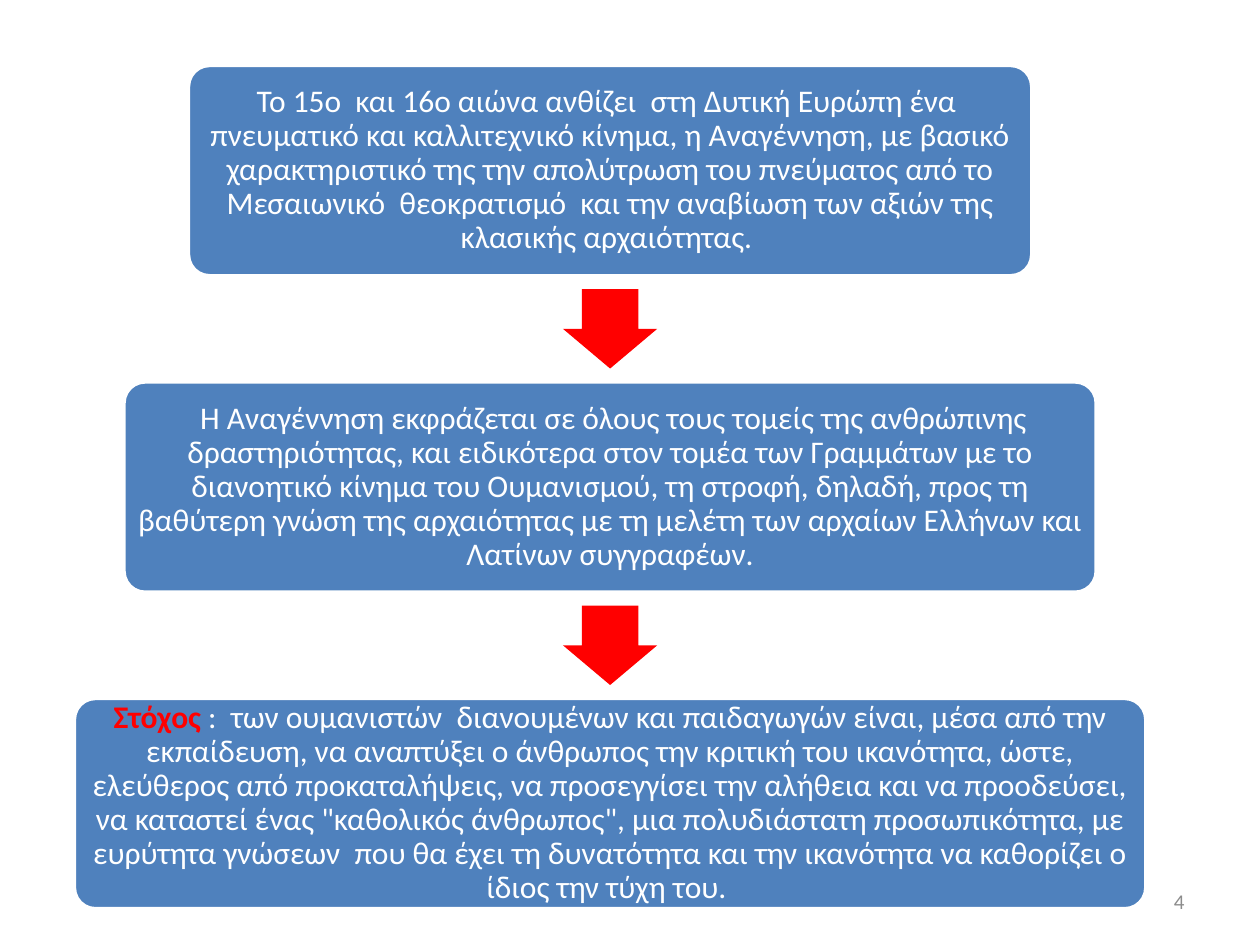
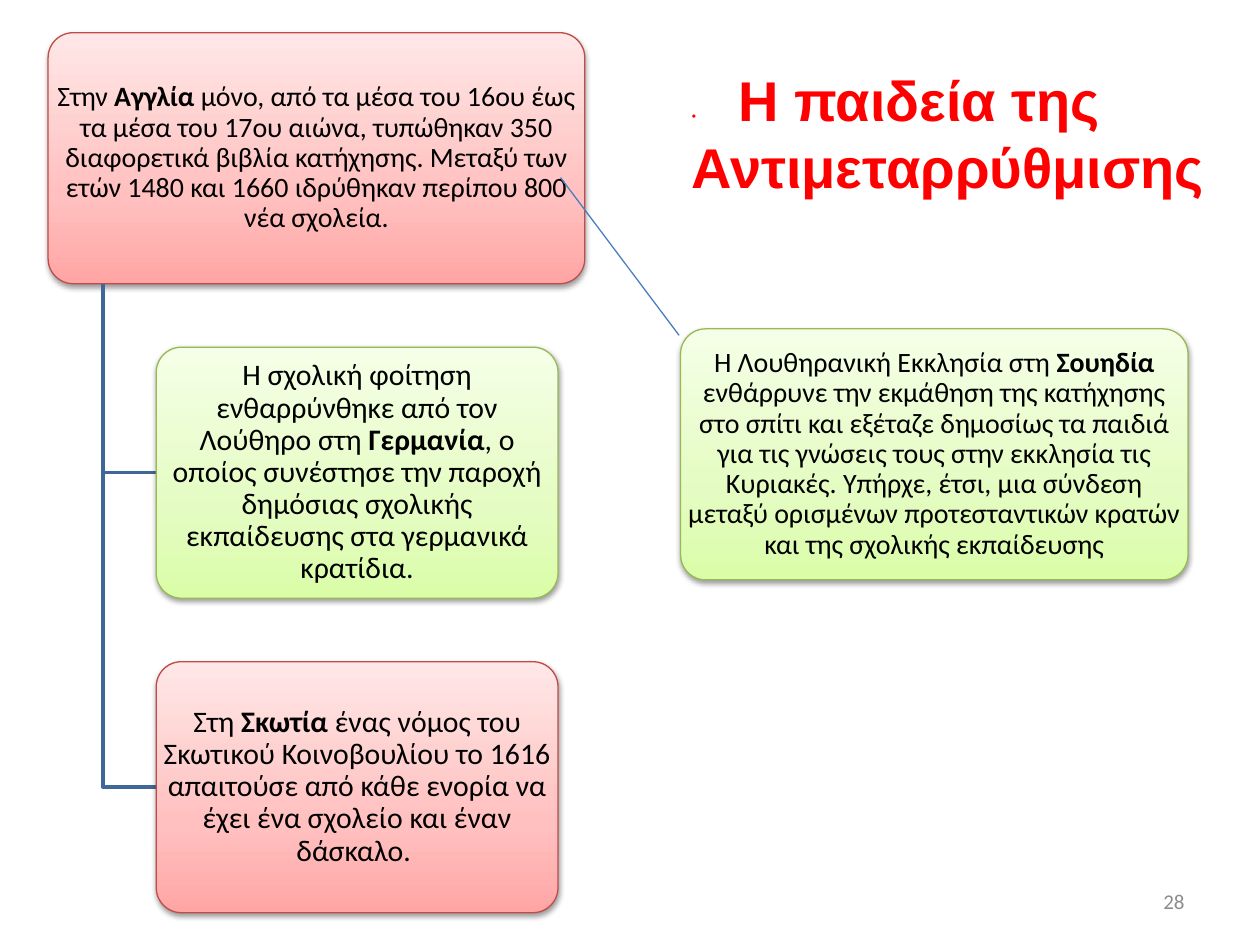
"""Builds two slides on Renaissance humanism and Counter-Reformation schooling."""
from lxml import etree
from pptx import Presentation
from pptx.dml.color import RGBColor
from pptx.enum.shapes import MSO_CONNECTOR, MSO_SHAPE
from pptx.enum.text import MSO_ANCHOR, MSO_AUTO_SIZE, PP_ALIGN
from pptx.oxml import parse_xml
from pptx.oxml.ns import nsdecls, qn
from pptx.util import Cm, Pt

ROUNDED = MSO_SHAPE.ROUNDED_RECTANGLE
DOWN_ARROW = MSO_SHAPE.DOWN_ARROW
STRAIGHT = MSO_CONNECTOR.STRAIGHT
LEFT, CENTER, RIGHT = PP_ALIGN.LEFT, PP_ALIGN.CENTER, PP_ALIGN.RIGHT
TOP, MIDDLE = MSO_ANCHOR.TOP, MSO_ANCHOR.MIDDLE
NO_AUTOFIT = MSO_AUTO_SIZE.NONE

WHITE = RGBColor(0xFF, 0xFF, 0xFF)
BLACK = RGBColor(0x00, 0x00, 0x00)
RED = RGBColor(0xFF, 0x00, 0x00)
BLUE = RGBColor(0x4F, 0x81, 0xBD)
LINK_BLUE = RGBColor(0x4B, 0x7E, 0xBC)
BRANCH_BLUE = RGBColor(0x3F, 0x67, 0x97)
GREY = RGBColor(0x8C, 0x8C, 0x8C)
PINK_LINE = RGBColor(0xBF, 0x4C, 0x48)
GREEN_LINE = RGBColor(0x98, 0xB9, 0x55)
PINK_STOPS = (RGBColor(0xFF, 0xA6, 0xA5), RGBColor(0xFF, 0xC0, 0xBF), RGBColor(0xFF, 0xE7, 0xE7))
GREEN_STOPS = (RGBColor(0xDA, 0xFD, 0xA7), RGBColor(0xE4, 0xFC, 0xC2), RGBColor(0xF5, 0xFF, 0xE7))
PINK = (PINK_STOPS, PINK_LINE)
GREEN = (GREEN_STOPS, GREEN_LINE)

STEP_TOP, STEP_HEIGHT, STEP_PITCH, STEP_CENTER = 1.32, 4.24, 6.38, 12.3
ARROW_WIDTH, ARROW_HEIGHT = 1.9, 1.6
CARD_TOP, CARD_HEIGHT, CARD_PITCH = 0.66, 5.06, 6.34
BRANCH_LEFT, BRANCH_WIDTH, TRUNK_X = 3.15, 8.1, 2.08

STEPS = [
    (17, [("Το 15ο  και 16ο αιώνα ανθίζει  στη Δυτική Ευρώπη ένα  πνευματικό και "
           "καλλιτεχνικό κίνημα, η Αναγέννηση, με βασικό χαρακτηριστικό της την "
           "απολύτρωση του πνεύματος από το Μεσαιωνικό  θεοκρατισμό  και την αναβίωση "
           "των αξιών της κλασικής αρχαιότητας. ", WHITE, False)]),
    (19.6, [(" Η Αναγέννηση εκφράζεται σε όλους τους τομείς της ανθρώπινης "
             "δραστηριότητας, και ειδικότερα στον τομέα των Γραμμάτων με το διανοητικό "
             "κίνημα του Ουμανισμού, τη στροφή, δηλαδή, προς τη βαθύτερη γνώση της "
             "αρχαιότητας με τη μελέτη των αρχαίων Ελλήνων και Λατίνων συγγραφέων.",
             WHITE, False)]),
    (21.6, [("Στόχος", RED, True),
            (" :  των ουμανιστών  διανουμένων και παιδαγωγών είναι, μέσα από την "
             "εκπαίδευση, να αναπτύξει ο άνθρωπος την κριτική του ικανότητα, ώστε, "
             "ελεύθερος από προκαταλήψεις, να προσεγγίσει την αλήθεια και να προοδεύσει, "
             "να καταστεί ένας \"καθολικός άνθρωπος\", μια πολυδιάστατη προσωπικότητα, με "
             "ευρύτητα γνώσεων  που θα έχει τη δυνατότητα και την ικανότητα να καθορίζει "
             "ο ίδιος την τύχη του. ", WHITE, False)]),
]
ENGLAND = [("Στην ", BLACK, False), ("Αγγλία ", BLACK, True),
           ("μόνο, από τα μέσα του 16ου έως τα μέσα του 17ου αιώνα, τυπώθηκαν 350 "
            "διαφορετικά βιβλία κατήχησης. Μεταξύ των ετών 1480 και 1660 ιδρύθηκαν "
            "περίπου 800 νέα σχολεία.", BLACK, False)]
GERMANY = [("Η σχολική φοίτηση ενθαρρύνθηκε από τον Λούθηρο στη ", BLACK, False),
           ("Γερμανία", BLACK, True),
           (", ο οποίος συνέστησε την παροχή δημόσιας σχολικής εκπαίδευσης στα "
            "γερμανικά κρατίδια.", BLACK, False)]
SCOTLAND = [("Στη ", BLACK, False), ("Σκωτία", BLACK, True),
            (" ένας νόμος του Σκωτικού Κοινοβουλίου το 1616 απαιτούσε από κάθε ενορία "
             "να έχει ένα σχολείο και έναν δάσκαλο. ", BLACK, False)]
SWEDEN = [("Η Λουθηρανική Εκκλησία στη ", BLACK, False), ("Σουηδία ", BLACK, True),
          ("ενθάρρυνε την εκμάθηση της κατήχησης στο σπίτι και εξέταζε δημοσίως τα "
           "παιδιά για τις γνώσεις τους στην εκκλησία τις Κυριακές. Υπήρχε, έτσι, μια "
           "σύνδεση μεταξύ ορισμένων προτεσταντικών κρατών και της σχολικής "
           "εκπαίδευσης", BLACK, False)]


def add_run(p, text, size, color, bold=False, font="Calibri"):
    """Append one formatted run to a paragraph."""
    r = p.add_run()
    r.text = text
    r.font.name, r.font.size, r.font.bold = font, Pt(size), bold
    r.font.color.rgb = color


def add_rounded_box(s, left, top, width, height, runs, size, inset):
    """Add a rounded rectangle with centred text."""
    sp = s.shapes.add_shape(ROUNDED, Cm(left), Cm(top), Cm(width), Cm(height))
    sp.adjustments[0] = 0.1
    sp.shadow.inherit = False
    tf = sp.text_frame
    tf.word_wrap, tf.vertical_anchor = True, MIDDLE
    tf.margin_left = tf.margin_right = tf.margin_top = tf.margin_bottom = Cm(inset)
    p = tf.paragraphs[0]
    p.alignment, p.line_spacing = CENTER, 0.9
    for text, color, bold in runs:
        add_run(p, text, size, color, bold)
    return sp


def add_step(s, index, width, runs):
    """Add one blue box of the vertical sequence."""
    sp = add_rounded_box(s, STEP_CENTER - width / 2, STEP_TOP + index * STEP_PITCH,
                         width, STEP_HEIGHT, runs, 18, 0.05)
    sp.fill.solid()
    sp.fill.fore_color.rgb = BLUE
    sp.line.color.rgb = WHITE
    sp.line.width = Pt(2)


def add_step_arrow(s, index):
    """Add the red arrow in the gap below a step."""
    gap_center = STEP_TOP + index * STEP_PITCH + (STEP_HEIGHT + STEP_PITCH) / 2
    sp = s.shapes.add_shape(DOWN_ARROW, Cm(STEP_CENTER - ARROW_WIDTH / 2),
                            Cm(gap_center - ARROW_HEIGHT / 2),
                            Cm(ARROW_WIDTH), Cm(ARROW_HEIGHT))
    sp.adjustments[0], sp.adjustments[1] = 0.6, 0.5
    sp.shadow.inherit = False
    sp.fill.solid()
    sp.fill.fore_color.rgb = RED
    sp.line.fill.background()


def add_card(s, left, top, width, runs, size, scheme):
    """Add a gradient card with a soft shadow."""
    stops, line_color = scheme
    sp = add_rounded_box(s, left, top, width, CARD_HEIGHT, runs, size, 0)
    sp.line.color.rgb = line_color
    sp.line.width = Pt(0.75)
    marks = "".join(f'<a:gs pos="{pos}"><a:srgbClr val="{color}"/></a:gs>'
                    for pos, color in zip((0, 35000, 100000), stops))
    gradient = parse_xml(f'<a:gradFill {nsdecls("a")} rotWithShape="1"><a:gsLst>{marks}</a:gsLst>'
                         '<a:lin ang="16200000" scaled="0"/></a:gradFill>')
    pr = sp.element.spPr
    pr.find(qn("a:prstGeom")).addnext(gradient)
    pr.find(qn("a:effectLst")).append(parse_xml(
        f'<a:outerShdw {nsdecls("a")} blurRad="{Pt(3.1)}" dist="{Pt(1.6)}" dir="5400000" '
        'rotWithShape="0"><a:srgbClr val="000000"><a:alpha val="38000"/></a:srgbClr>'
        '</a:outerShdw>'))


def add_branch(s, start_y, end_y):
    """Add an elbow from the trunk to the side of a card."""
    builder = s.shapes.build_freeform(Cm(TRUNK_X), Cm(start_y))
    builder.add_line_segments([(Cm(TRUNK_X), Cm(end_y)), (Cm(BRANCH_LEFT), Cm(end_y))],
                              close=False)
    sp = builder.convert_to_shape()
    sp.shadow.inherit = False
    sp.fill.background()
    sp.line.color.rgb = BRANCH_BLUE
    sp.line.width = Pt(2)


def add_link(s, x1, y1, x2, y2):
    """Add a thin straight line."""
    line = s.shapes.add_connector(STRAIGHT, Cm(x1), Cm(y1), Cm(x2), Cm(y2))
    line.line.color.rgb = LINK_BLUE
    line.line.width = Pt(0.75)
    etree.SubElement(line.element.spPr, qn("a:effectLst"))


def set_title(s, text):
    """Place the red title, led by a small dot and a tab."""
    title = s.shapes.title
    title.left, title.top, title.width, title.height = Cm(13.69), Cm(1.19), Cm(10.92), Cm(3)
    tf = title.text_frame
    tf.word_wrap, tf.vertical_anchor, tf.auto_size = True, TOP, NO_AUTOFIT
    p = tf.paragraphs[0]
    p.alignment = LEFT
    add_run(p, "·\t", 10, RED, True)
    add_run(p, text, 32, RED, True, "Arial")
    tabs = etree.SubElement(p._p.get_or_add_pPr(), qn("a:tabLst"))
    etree.SubElement(tabs, qn("a:tab"), pos=str(Cm(0.94)), algn="l")


def add_page_number(s, number):
    """Add the grey page number at the lower right."""
    tf = s.shapes.add_textbox(Cm(18.21), Cm(17.65), Cm(5.92), Cm(1.02)).text_frame
    tf.word_wrap, tf.vertical_anchor = True, MIDDLE
    p = tf.paragraphs[0]
    p.alignment = RIGHT
    add_run(p, str(number), 12, GREY)


def build_renaissance(prs):
    """Build the three-step slide on the Renaissance."""
    s = prs.slides.add_slide(prs.slide_layouts[6])
    for index, (width, runs) in enumerate(STEPS):
        add_step(s, index, width, runs)
        if index < len(STEPS) - 1:
            add_step_arrow(s, index)
    add_page_number(s, 4)


def build_schooling(prs):
    """Build the slide on schooling by country."""
    s = prs.slides.add_slide(prs.slide_layouts[5])
    set_title(s, "Η παιδεία της Αντιμεταρρύθμισης")
    add_card(s, 0.97, CARD_TOP, 10.82, ENGLAND, 16, PINK)
    for row, (runs, scheme) in enumerate([(GERMANY, GREEN), (SCOTLAND, PINK)], 1):
        top = CARD_TOP + row * CARD_PITCH
        add_branch(s, CARD_TOP + CARD_HEIGHT, top + CARD_HEIGHT / 2)
        add_card(s, BRANCH_LEFT, top, BRANCH_WIDTH, runs, 17, scheme)
    add_card(s, 13.72, 6.63, 10.23, SWEDEN, 16, GREEN)
    add_link(s, 11.3, 3.58, 13.69, 6.76)
    add_page_number(s, 28)


def main():
    """Create and save the presentation."""
    prs = Presentation()
    prs.slide_width, prs.slide_height = Cm(25.4), Cm(19.05)
    build_renaissance(prs)
    build_schooling(prs)
    prs.save("out.pptx")


if __name__ == "__main__":
    main()
